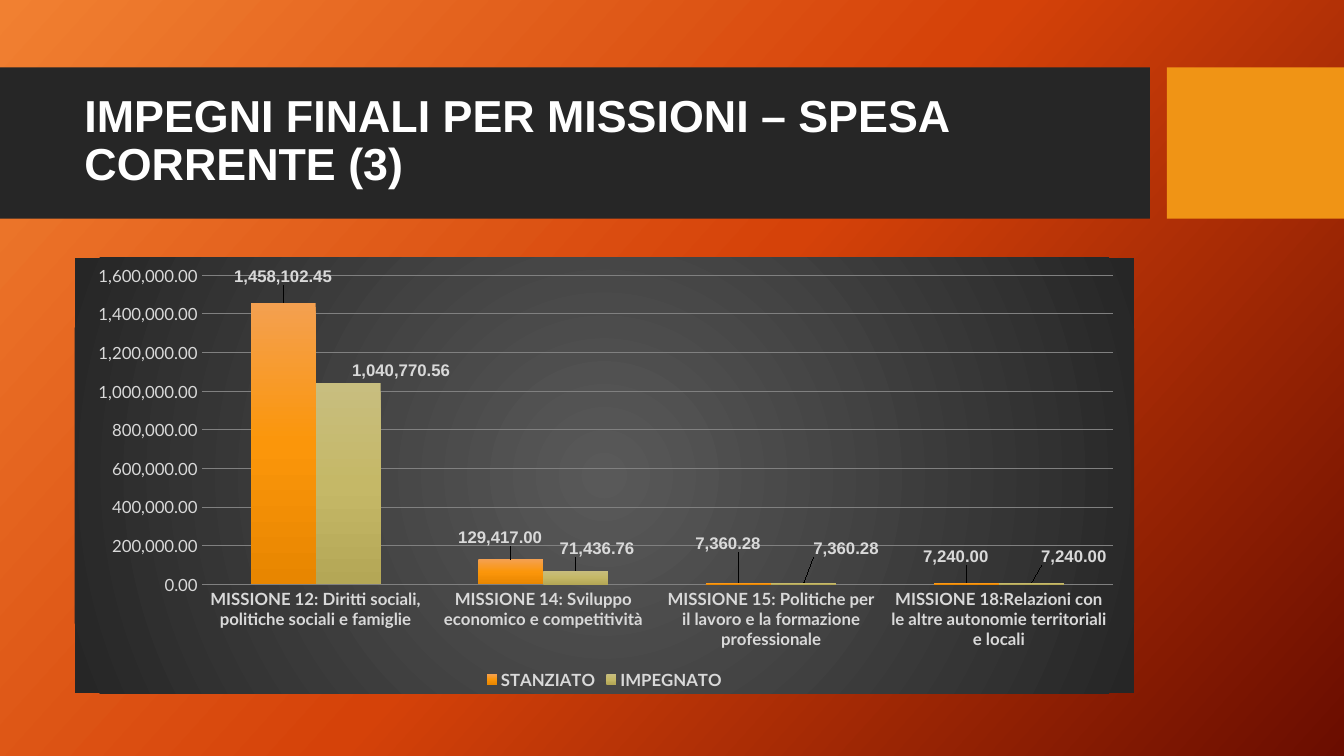
"""Build a slide with a clustered column chart of commitments by mission."""
from dataclasses import dataclass
from typing import Optional

from lxml import etree
from pptx import Presentation
from pptx import util as u
from pptx.chart import data as cd
from pptx.dml.color import RGBColor
from pptx.enum import chart as ce, shapes, text
from pptx.oxml import ns, parse_xml


@dataclass(frozen=True)
class Gradient:
    """Colours spread evenly, linear at an angle or circular without one."""
    colours: tuple[str, ...]
    angle: Optional[int] = None


@dataclass(frozen=True)
class Theme:
    """Colours, fonts and type sizes of the slide."""
    background: Gradient = Gradient(("F18031", "D54209", "6A0D00"), 42)
    panel: Gradient = Gradient(("595959", "262626"))
    band: str = "262626"
    accent: str = "F09415"
    white: str = "FFFFFF"
    label: str = "D9D9D9"
    grid: str = "808080"
    heading_font: str = "Arial"
    chart_font: str = "Lato"
    title_size: int = 32
    label_size: int = 12
    base_size: int = 10


@dataclass(frozen=True)
class Box:
    """Place and size in centimetres."""
    left: float
    top: float
    width: float
    height: float

    def lengths(self) -> tuple:
        """Return the four lengths."""
        return tuple(map(u.Cm, (self.left, self.top, self.width, self.height)))


@dataclass(frozen=True)
class Block:
    """A plain filled rectangle."""
    box: Box
    colour: str


@dataclass(frozen=True)
class Spending:
    """A data series with the shift of each label as chart fractions."""
    name: str
    values: tuple[float, ...]
    fill: Gradient
    shifts: tuple[tuple[float, float], ...]


THEME = Theme()
NUMBER_FORMAT = "#,##0.00"
TITLE = "IMPEGNI FINALI PER MISSIONI – SPESA CORRENTE (3)"
TITLE_BOX = Box(1.88, 2.08, 26.7, 3)
CHART_BOX = Box(1.88, 6.5, 26.7, 10.97)
BLOCKS = (
    Block(Box(0, 1.7, 28.98, 3.81), THEME.band),
    Block(Box(29.41, 1.7, 4.46, 3.81), THEME.accent),
)
MISSIONS = (
    "MISSIONE 12: Diritti sociali, politiche sociali e famiglie",
    "MISSIONE 14: Sviluppo economico e competitività",
    "MISSIONE 15: Politiche per il lavoro e la formazione professionale",
    "MISSIONE 18:Relazioni con le altre autonomie territoriali e locali",
)
SERIES = (
    Spending("STANZIATO", (1458102.45, 129417, 7360.28, 7240),
             Gradient(("F4A050", "FB960A", "E88600"), 90),
             ((0, -0.03), (-0.01, -0.02), (-0.01, -0.06), (-0.01, -0.03))),
    Spending("IMPEGNATO", (1040770.56, 71436.76, 7360.28, 7240),
             Gradient(("C8BE7F", "C5B867", "B4A756"), 90),
             ((0.05, 0), (0.02, -0.02), (0.04, -0.05), (0.04, -0.03))),
)


def set_font(font, name: str, size: int, colour: str, bold: bool = False) -> None:
    """Format a font."""
    font.name, font.size, font.bold = name, u.Pt(size), bold
    font.color.rgb = RGBColor.from_string(colour)


def gradient_xml(gradient: Gradient):
    """Return the gradient fill element."""
    step = 100000 // (len(gradient.colours) - 1)
    stops = "".join(f'<a:gs pos="{i * step}"><a:srgbClr val="{c}"/></a:gs>'
                    for i, c in enumerate(gradient.colours))
    if gradient.angle is None:
        shade = ('<a:path path="circle"><a:fillToRect l="50000" t="50000" '
                 'r="50000" b="50000"/></a:path>')
    else:
        shade = f'<a:lin ang="{gradient.angle * 60000}" scaled="0"/>'
    return parse_xml(f'<a:gradFill {ns.nsdecls("a")} rotWithShape="1">'
                     f'<a:gsLst>{stops}</a:gsLst>{shade}</a:gradFill>')


def paint(fill, owner, gradient: Gradient) -> None:
    """Give the owner of a fill a gradient."""
    fill.solid()
    solid = next(owner.iter(ns.qn("a:solidFill")))
    solid.getparent().replace(solid, gradient_xml(gradient))


def layout_xml(**settings):
    """Return a manual chart layout element."""
    items = "".join(f'<c:{k} val="{v}"/>' for k, v in settings.items())
    return parse_xml(f'<c:layout {ns.nsdecls("c")}><c:manualLayout>{items}'
                     '</c:manualLayout></c:layout>')


def add_block(slide, block: Block) -> None:
    """Draw a filled rectangle."""
    s = slide.shapes.add_shape(shapes.MSO_SHAPE.RECTANGLE, *block.box.lengths())
    s.shadow.inherit = False
    s.fill.solid()
    s.fill.fore_color.rgb = RGBColor.from_string(block.colour)
    s.line.fill.background()


def add_title(slide) -> None:
    """Write the title."""
    tf = slide.shapes.add_textbox(*TITLE_BOX.lengths()).text_frame
    tf.word_wrap = True
    tf.vertical_anchor = text.MSO_ANCHOR.MIDDLE
    tf.text = TITLE
    p = tf.paragraphs[0]
    p.line_spacing = 0.9
    set_font(p.runs[0].font, THEME.heading_font, THEME.title_size, THEME.white, True)


def style_axis(axis, bold: bool) -> None:
    """Format the labels of an axis and hide its line and ticks."""
    axis.major_tick_mark = axis.minor_tick_mark = ce.XL_TICK_MARK.NONE
    axis.format.line.fill.background()
    set_font(axis.tick_labels.font, THEME.chart_font, THEME.label_size, THEME.label, bold)


def style_series(series, spending: Spending) -> None:
    """Fill a series and place its value labels."""
    paint(series.format.fill, series._element, spending.fill)
    series.invert_if_negative = False
    labels = series.data_labels
    labels.show_value = True
    labels.number_format, labels.number_format_is_linked = NUMBER_FORMAT, False
    set_font(labels.font, THEME.heading_font, THEME.label_size, THEME.label, True)
    for i in range(len(spending.shifts)):
        label = series.points[i].data_label
        set_font(label.font, THEME.heading_font, THEME.label_size, THEME.label, True)
        label.position = ce.XL_LABEL_POSITION.OUTSIDE_END
    marks = series._element.findall(".//" + ns.qn("c:dLbl"))
    for mark, (x, y) in zip(marks, spending.shifts):
        mark.find(ns.qn("c:idx")).addnext(layout_xml(x=x, y=y))


def add_chart(slide) -> None:
    """Draw the column chart."""
    data = cd.CategoryChartData(number_format=NUMBER_FORMAT)
    data.categories = MISSIONS
    for spending in SERIES:
        data.add_series(spending.name, spending.values)
    chart = slide.shapes.add_chart(
        ce.XL_CHART_TYPE.COLUMN_CLUSTERED, *CHART_BOX.lengths(), data).chart
    set_font(chart.font, THEME.chart_font, THEME.base_size, THEME.white)
    chart.has_title = False
    chart.has_legend = True
    chart.legend.position = ce.XL_LEGEND_POSITION.BOTTOM
    chart.legend.include_in_layout = False
    set_font(chart.legend.font, THEME.chart_font, THEME.label_size, THEME.label, True)
    style_axis(chart.category_axis, True)
    axis = chart.value_axis
    style_axis(axis, False)
    axis.minimum_scale, axis.maximum_scale, axis.major_unit = 0, 1600000, 200000
    axis.tick_labels.number_format = NUMBER_FORMAT
    axis.tick_labels.number_format_is_linked = False
    grid = axis.major_gridlines.format.line
    grid.color.rgb = RGBColor.from_string(THEME.grid)
    grid.width = u.Pt(0.75)
    plot = chart.plots[0]
    plot.gap_width, plot.overlap, plot.vary_by_categories = 150, 0, False
    for series, spending in zip(plot.series, SERIES):
        style_series(series, spending)
    space = chart._chartSpace
    area = space.find(".//" + ns.qn("c:plotArea"))
    for old in area.findall(ns.qn("c:layout")):
        area.remove(old)
    area.insert(0, layout_xml(layoutTarget="inner", xMode="edge", yMode="edge",
                              x=0.12, y=0.04, w=0.86, h=0.71))
    panel = parse_xml(f'<c:spPr {ns.nsdecls("c", "a")}><a:ln><a:noFill/></a:ln></c:spPr>')
    panel.insert(0, gradient_xml(THEME.panel))
    space.find(ns.qn("c:txPr")).addprevious(panel)


def main() -> None:
    """Build and save the slide."""
    prs = Presentation()
    prs.slide_width, prs.slide_height = u.Cm(33.87), u.Cm(19.05)
    slide = prs.slides.add_slide(prs.slide_layouts[6])
    paint(slide.background.fill, slide._element, THEME.background)
    for block in BLOCKS:
        add_block(slide, block)
    add_title(slide)
    add_chart(slide)
    prs.save("out.pptx")


if __name__ == "__main__":
    main()
